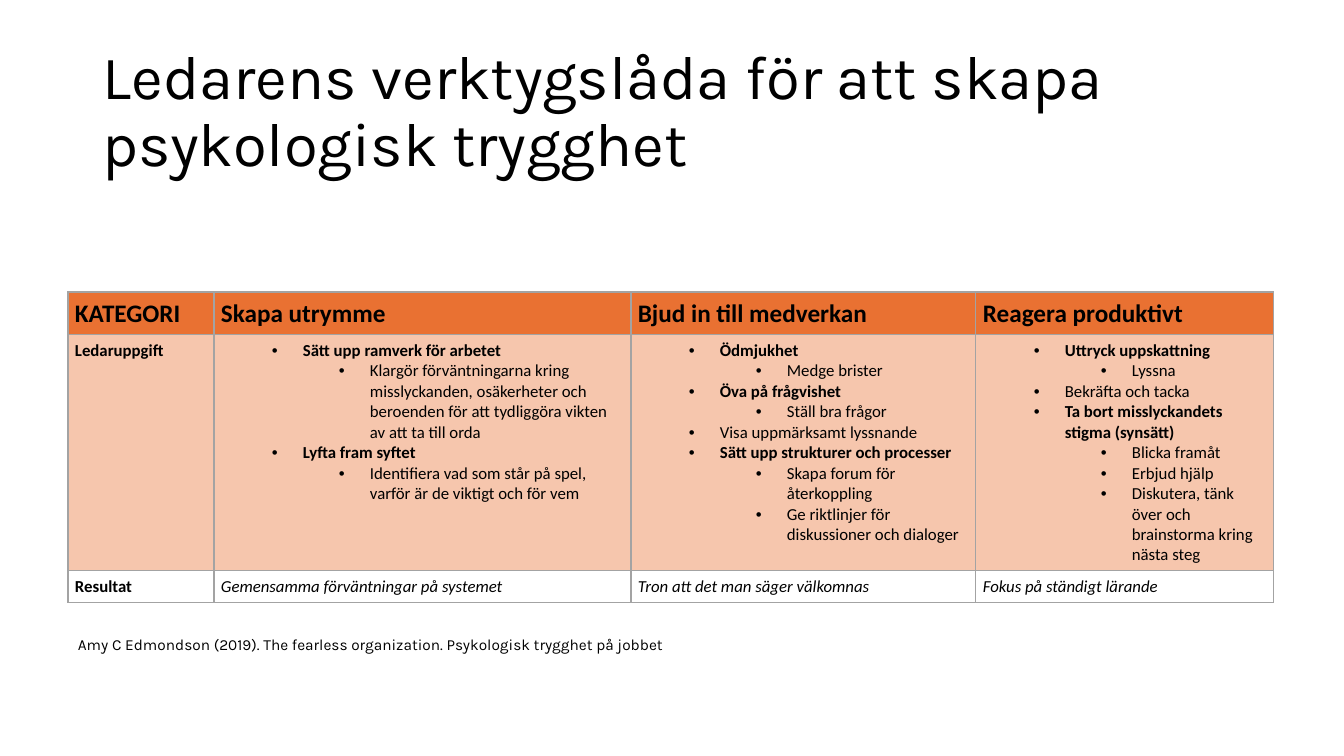
"""Build a slide with a leader's toolbox table for psychological safety."""
from lxml.etree import SubElement
from pptx import Presentation
from pptx.dml.color import RGBColor
from pptx.enum.text import MSO_ANCHOR as Anchor
from pptx.oxml import parse_xml
from pptx.oxml.ns import nsdecls, qn
from pptx.util import Pt

TITLE = "Ledarens verktygslåda för att skapa psykologisk trygghet"
SOURCE = "Amy C Edmondson (2019). The fearless organization. Psykologisk trygghet på jobbet"
HEADINGS = ["KATEGORI", "Skapa utrymme", "Bjud in till medverkan", "Reagera produktivt"]
TASK_LABEL = "Ledaruppgift"
TASKS = [
    [
        (1, True, "Sätt upp ramverk för arbetet"),
        (2, False, "Klargör förväntningarna kring misslyckanden, osäkerheter och "
                   "beroenden för att tydliggöra vikten av att ta till orda"),
        (1, True, "Lyfta fram syftet"),
        (2, False, "Identifiera vad som står på spel, varför är de viktigt och för vem"),
    ],
    [
        (1, True, "Ödmjukhet"),
        (2, False, "Medge brister"),
        (1, True, "Öva på frågvishet"),
        (2, False, "Ställ bra frågor"),
        (1, False, "Visa uppmärksamt lyssnande"),
        (1, True, "Sätt upp strukturer och processer"),
        (2, False, "Skapa forum för återkoppling"),
        (2, False, "Ge riktlinjer för diskussioner och dialoger"),
    ],
    [
        (1, True, "Uttryck uppskattning"),
        (2, False, "Lyssna"),
        (1, False, "Bekräfta och tacka"),
        (1, True, "Ta bort misslyckandets stigma (synsätt)"),
        (2, False, "Blicka framåt"),
        (2, False, "Erbjud hjälp"),
        (2, False, "Diskutera, tänk över och brainstorma kring nästa steg"),
    ],
]
RESULT_LABEL = "Resultat"
RESULTS = [
    "Gemensamma förväntningar på systemet",
    "Tron att det man säger välkomnas",
    "Fokus på ständigt lärande",
]

BLACK = RGBColor(0x00, 0x00, 0x00)
ORANGE = RGBColor(0xE9, 0x71, 0x32)
PEACH = RGBColor(0xF6, 0xC6, 0xAD)
GREY = RGBColor(0xA3, 0xA3, 0xA3)

COLUMN_WIDTHS = [146, 417, 345, 298]
ROW_HEIGHTS = [42, 236, 32]
ROW_FILLS = [ORANGE, PEACH, None]
BULLET_MARGINS = {1: 82, 2: 149}
HANGING = 31


def px(length):
    return round(length * 914400 / 100.8)


def set_font(paragraph, name, size, bold=False, italic=False):
    font = paragraph.font
    font.name, font.size = name, Pt(size)
    font.bold, font.italic = bold, italic
    font.color.rgb = BLACK


def add_text(slide, text, box, size, anchor):
    frame = slide.shapes.add_textbox(*map(px, box)).text_frame
    frame.word_wrap = True
    frame.vertical_anchor = anchor
    paragraph = frame.paragraphs[0]
    paragraph.text = text
    set_font(paragraph, "Karla", size)
    return paragraph


def add_bullet(paragraph, level):
    paragraph.level = level
    properties = paragraph._p.get_or_add_pPr()
    properties.set("marL", str(px(BULLET_MARGINS[level])))
    properties.set("indent", str(-px(HANGING)))
    properties.insert(0, parse_xml(f'<a:buFont {nsdecls("a")} typeface="Arial"/>'))
    properties.insert(1, parse_xml(f'<a:buChar {nsdecls("a")} char="•"/>'))


def style_cell(cell, color):
    cell.margin_left = cell.margin_right = px(7)
    cell.margin_top = cell.margin_bottom = px(6)
    if color is None:
        cell.fill.background()
    else:
        cell.fill.solid()
        cell.fill.fore_color.rgb = color
    properties = cell._tc.get_or_add_tcPr()
    for position, side in enumerate(("lnL", "lnR", "lnT", "lnB")):
        border = SubElement(properties, qn(f"a:{side}"), w=str(Pt(1)))
        SubElement(SubElement(border, qn("a:solidFill")), qn("a:srgbClr"), val=str(GREY))
        properties.insert(position, border)


def fill_cell(cell, entries, size, italic=False):
    frame = cell.text_frame
    for index, (level, bold, text) in enumerate(entries):
        paragraph = frame.add_paragraph() if index else frame.paragraphs[0]
        paragraph.text = text
        set_font(paragraph, "Calibri", size, bold, italic)
        if level:
            add_bullet(paragraph, level)


def add_toolbox(slide):
    rows = [
        [[(0, True, heading)] for heading in HEADINGS],
        [[(0, True, TASK_LABEL)], *TASKS],
        [[(0, True, RESULT_LABEL)], *([(0, False, result)] for result in RESULTS)],
    ]
    table = slide.shapes.add_table(
        len(rows), len(HEADINGS), px(68), px(292),
        px(sum(COLUMN_WIDTHS)), px(sum(ROW_HEIGHTS))).table
    table.first_row = table.horz_banding = False
    for column, width in zip(table.columns, COLUMN_WIDTHS):
        column.width = px(width)
    for r, cells in enumerate(rows):
        table.rows[r].height = px(ROW_HEIGHTS[r])
        for c, entries in enumerate(cells):
            cell = table.cell(r, c)
            style_cell(cell, ROW_FILLS[r])
            fill_cell(cell, entries, 12 if r else 18, italic=r == 2 and c > 0)


def main():
    deck = Presentation()
    deck.slide_width, deck.slide_height = px(1344), px(756)
    slide = deck.slides.add_slide(deck.slide_layouts[6])
    title = add_text(slide, TITLE, (93, 40, 1159, 146), 44, Anchor.MIDDLE)
    title.line_spacing = 0.9
    add_toolbox(slide)
    add_text(slide, SOURCE, (68, 630, 672, 29), 11, Anchor.TOP)
    deck.save("out.pptx")


if __name__ == "__main__":
    main()
